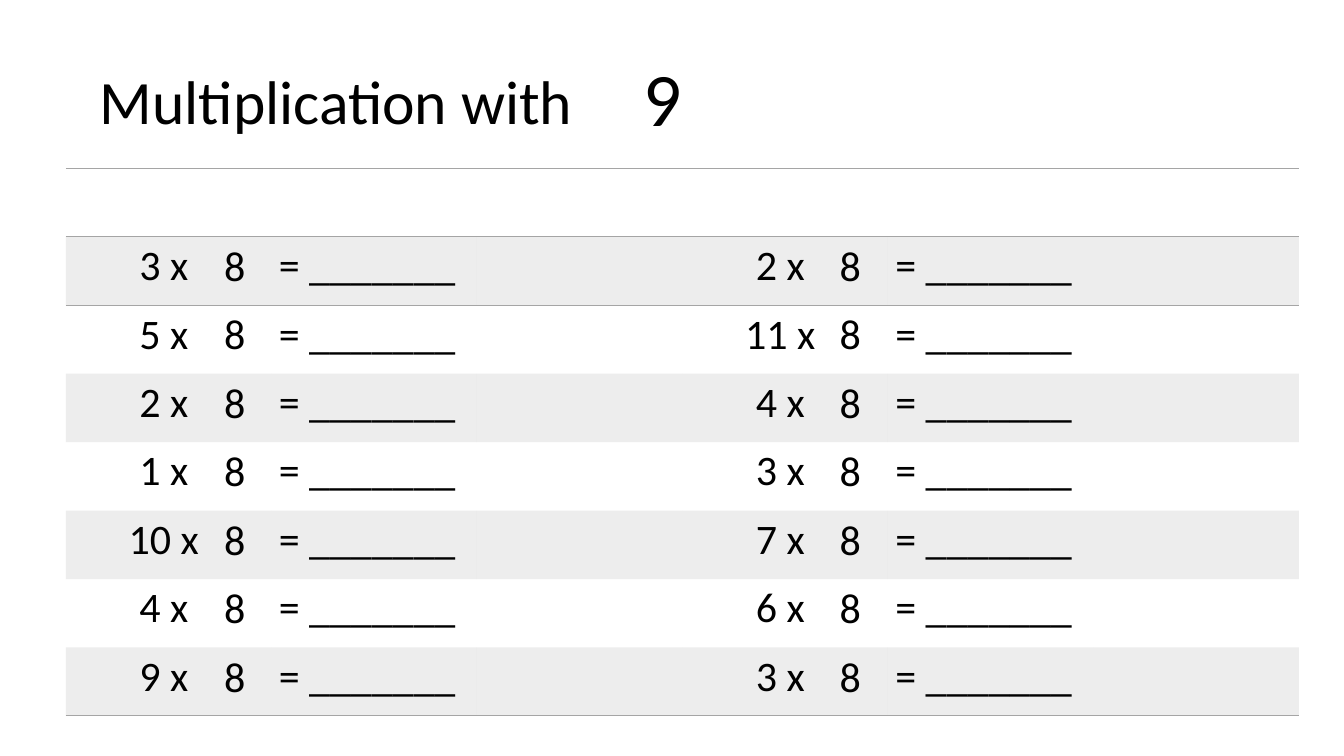
from lxml import etree
from pptx import Presentation
from pptx.dml.color import RGBColor
from pptx.enum.text import MSO_ANCHOR, PP_ALIGN
from pptx.oxml import parse_xml
from pptx.oxml.ns import nsdecls, qn
from pptx.util import Cm, Pt

CENTER, LEFT = PP_ALIGN.CENTER, PP_ALIGN.LEFT
TOP, MIDDLE = MSO_ANCHOR.TOP, MSO_ANCHOR.MIDDLE

TITLE = "Multiplication with"
TABLE_NUMBER = "9"
MULTIPLICAND = "8"
ANSWER = "= _______"
FACTORS = [(3, 2), (5, 11), (2, 4), (1, 3), (10, 7), (4, 6), (9, 3)]

COLORS = {"text": "000000", "gray": "A5A5A5"}
FONT = "Calibri"
BAND_OPACITY = 20
PLAIN_STYLE = "{2D5ABB26-0587-4C30-8999-92F81FD0307C}"

TABLE_LEFT, TABLE_TOP = 2.21, 5.66
COLUMN_WIDTH, ROW_HEIGHT = 6.905, 2.3
COLUMNS_PER_SIDE = 3
NUMBER_LEFT, NUMBER_TOP = 7.04, 7.92
NUMBER_WIDTH, NUMBER_HEIGHT = 1.7, 1.96
SIDE_GAP = 20.68


def write(frame, text, size, alignment):
    paragraph = frame.paragraphs[0]
    paragraph.alignment = alignment
    run = paragraph.add_run()
    run.text = text
    run.font.size = Pt(size)
    run.font.name = FONT
    run.font.color.rgb = RGBColor.from_string(COLORS["text"])
    return paragraph


def add_label(slide, box, text, size, alignment=CENTER, anchor=TOP):
    frame = slide.shapes.add_textbox(*map(Cm, box)).text_frame
    frame.word_wrap = True
    frame.vertical_anchor = anchor
    return write(frame, text, size, alignment)


def set_borders(cell, edges):
    """Draw a thin gray line on each edge tag, given in schema order."""
    properties = cell._tc.get_or_add_tcPr()
    for index, edge in enumerate(edges):
        properties.insert(index, parse_xml(
            f'<a:{edge} {nsdecls("a")} w="12700"><a:solidFill>'
            f'<a:srgbClr val="{COLORS["gray"]}"/></a:solidFill></a:{edge}>'))


def set_band(cell, shaded):
    if not shaded:
        cell.fill.background()
        return
    cell.fill.solid()
    cell.fill.fore_color.rgb = RGBColor.from_string(COLORS["gray"])
    color = cell._tc.tcPr.find(".//" + qn("a:srgbClr"))
    etree.SubElement(color, qn("a:alpha"), val=str(BAND_OPACITY * 1000))


def add_exercise_table(slide):
    row_count, column_count = len(FACTORS) + 1, 2 * COLUMNS_PER_SIDE
    table = slide.shapes.add_table(
        row_count, column_count, Cm(TABLE_LEFT), Cm(TABLE_TOP),
        Cm(column_count * COLUMN_WIDTH), Cm(row_count * ROW_HEIGHT)).table
    table._tbl.tblPr.find(qn("a:tableStyleId")).text = PLAIN_STYLE
    for row_index in range(row_count):
        for column_index in range(column_count):
            cell = table.cell(row_index, column_index)
            set_band(cell, row_index % 2 == 1)
            if row_index == 0:
                set_borders(cell, ["lnT", "lnB"])
                continue
            if row_index == 1:
                set_borders(cell, ["lnT"])
            if row_index == row_count - 1:
                set_borders(cell, ["lnB"])
            side, part = divmod(column_index, COLUMNS_PER_SIDE)
            if part == 0:
                factor = FACTORS[row_index - 1][side]
                write(cell.text_frame, f"{factor} x ", 40, CENTER)
            elif part == 1:
                write(cell.text_frame, ANSWER, 40, LEFT)


def main():
    presentation = Presentation()
    presentation.slide_width, presentation.slide_height = Cm(45.16), Cm(25.4)
    slide = presentation.slides.add_slide(presentation.slide_layouts[6])

    title = add_label(slide, (3.1, 1.35, 17.55, 4.32), TITLE, 58.7, LEFT, MIDDLE)
    title.line_spacing = 0.9
    add_exercise_table(slide)
    add_label(slide, (20.42, 1.57, 3.68, 3.33), TABLE_NUMBER, 72)
    for side in range(2):
        for row_index in range(len(FACTORS)):
            box = (NUMBER_LEFT + side * SIDE_GAP,
                   NUMBER_TOP + row_index * ROW_HEIGHT,
                   NUMBER_WIDTH, NUMBER_HEIGHT)
            add_label(slide, box, MULTIPLICAND, 40)

    presentation.save("out.pptx")


if __name__ == "__main__":
    main()
